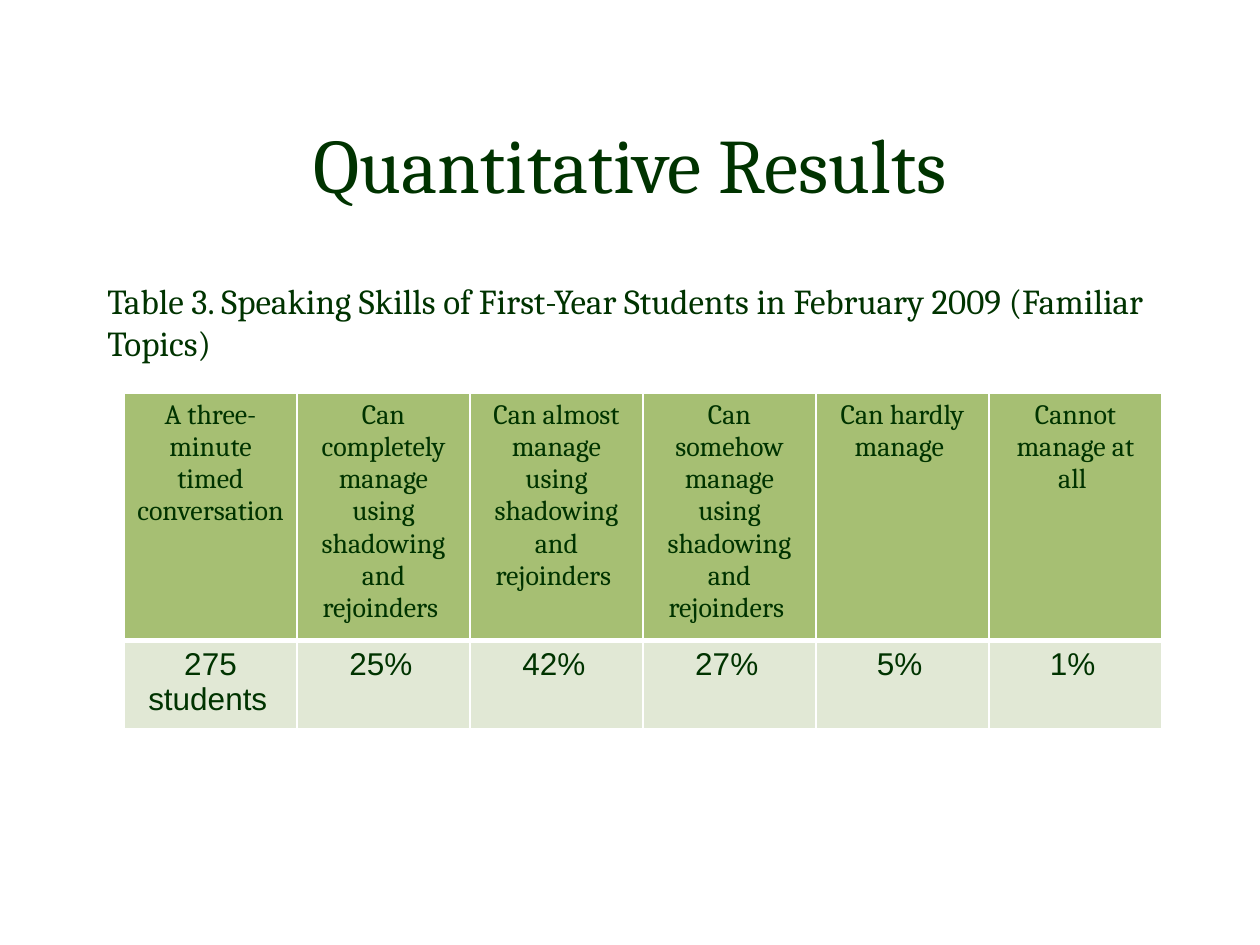
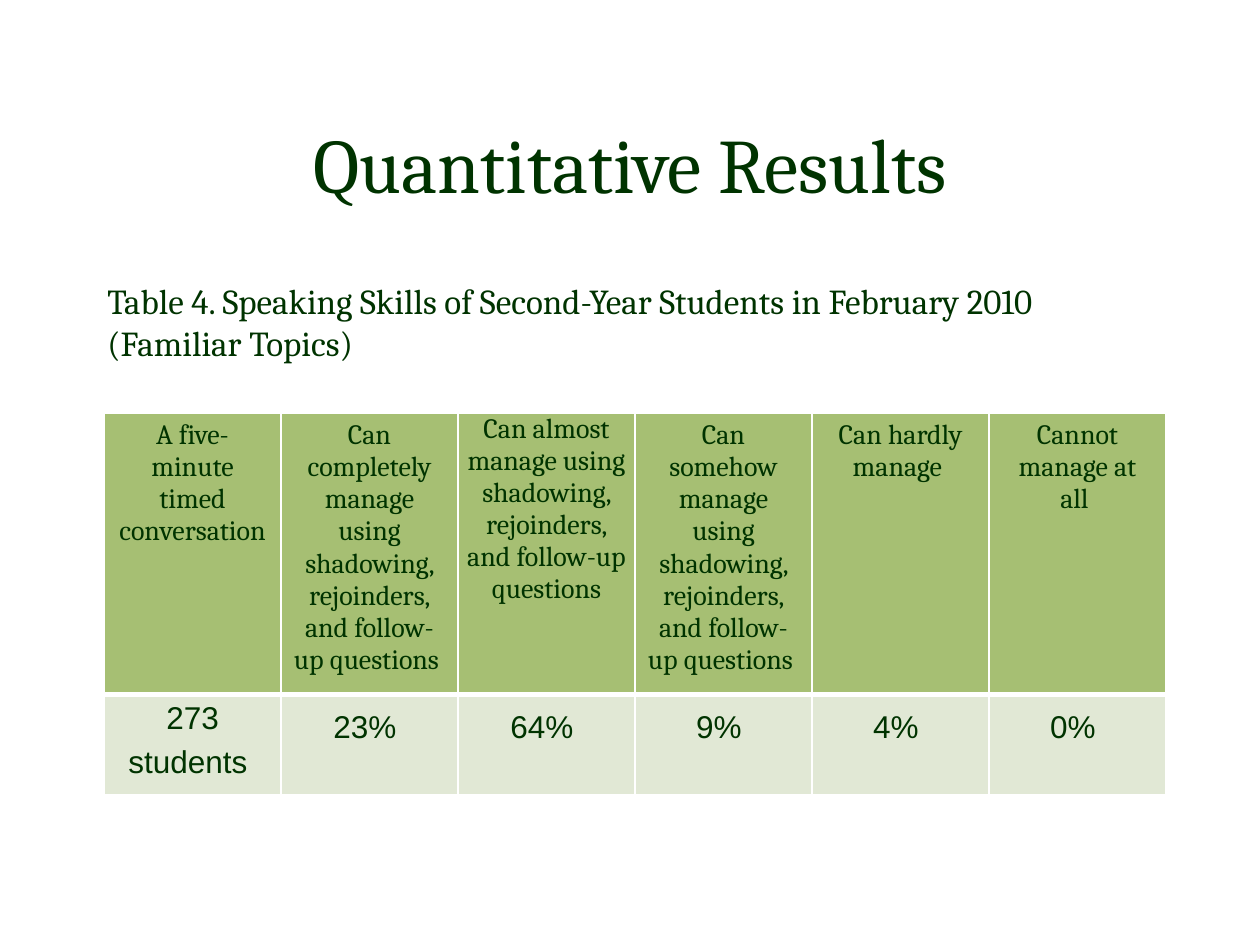
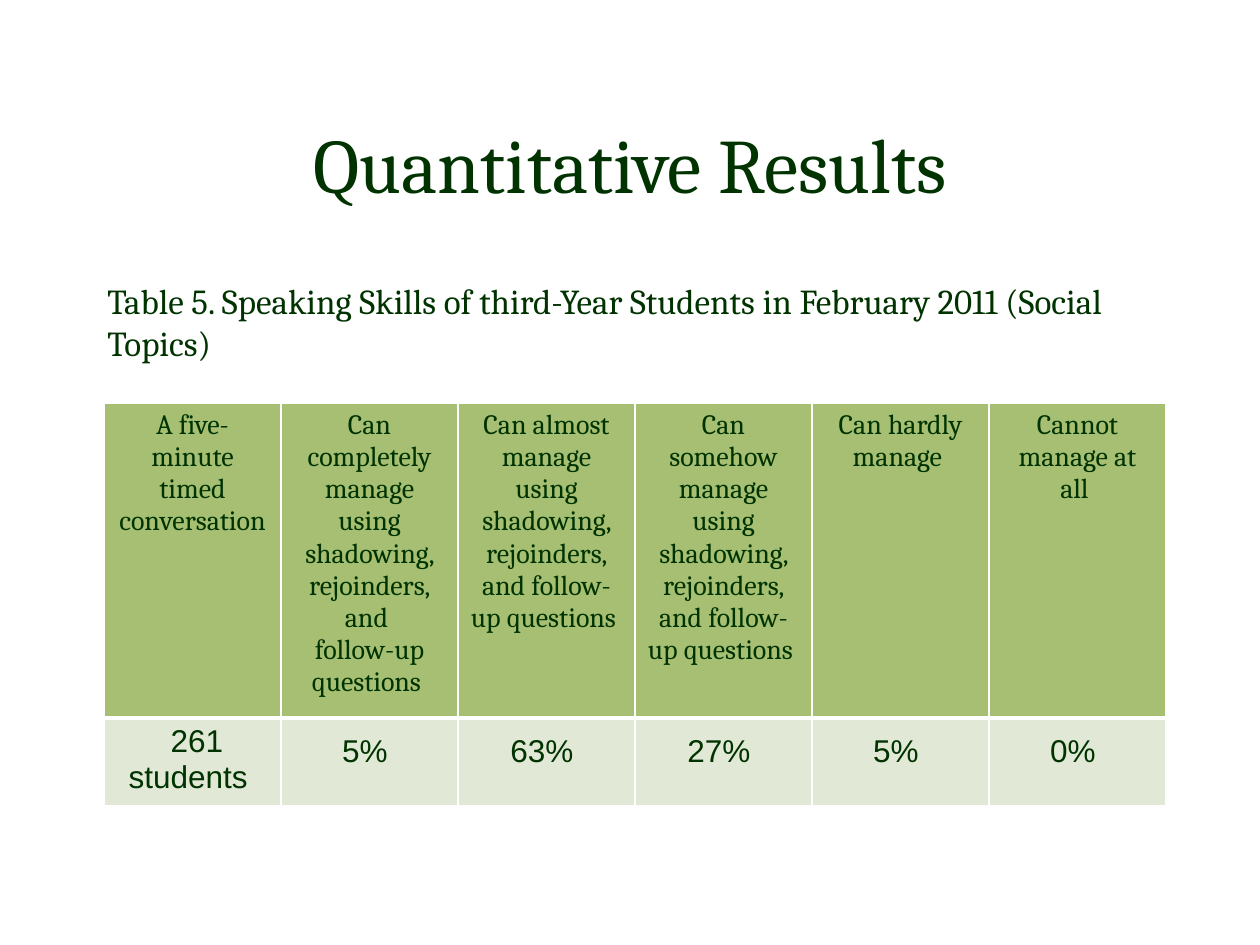
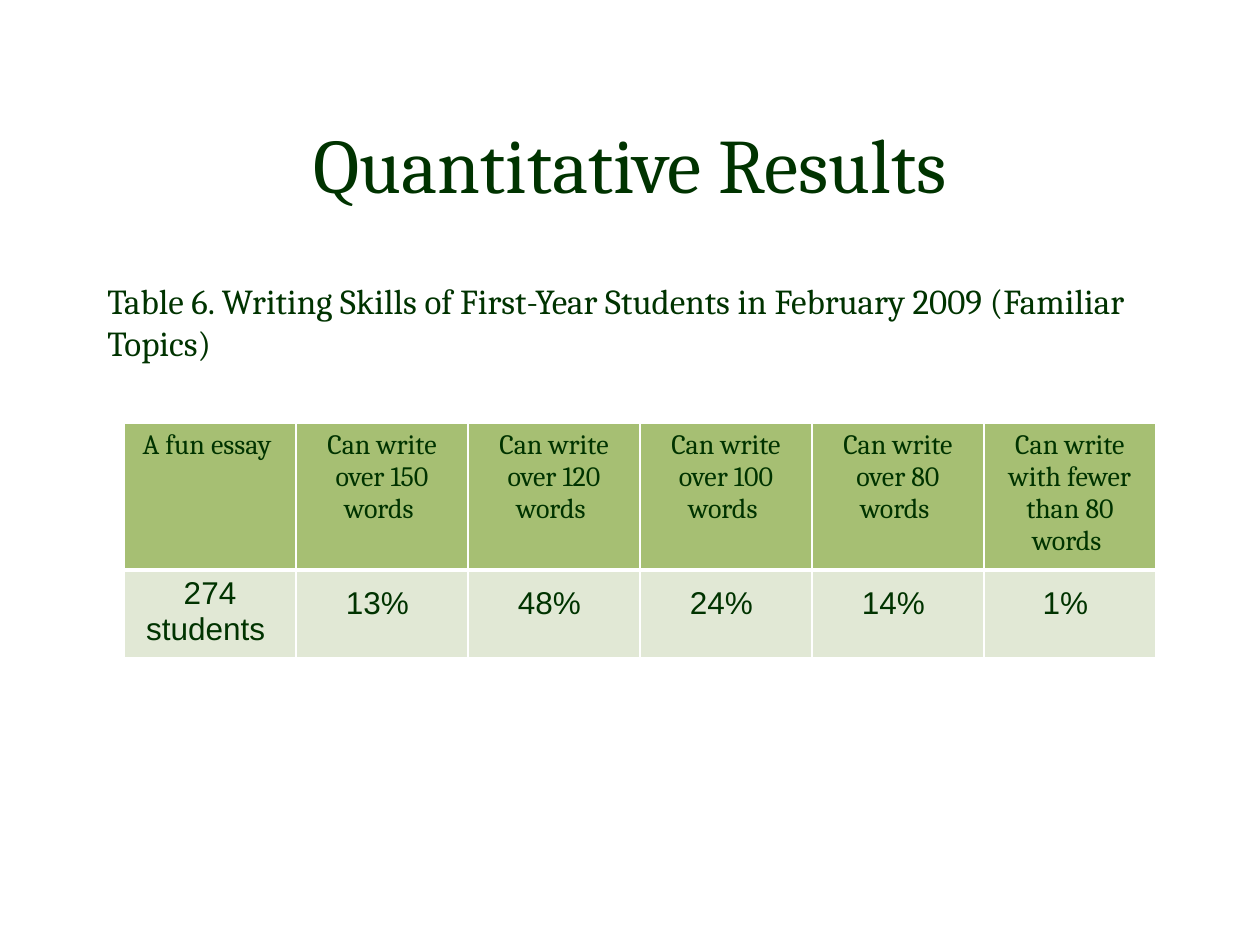
from lxml import etree
from pptx import Presentation
from pptx.dml.color import RGBColor
from pptx.enum.text import MSO_ANCHOR, PP_ALIGN
from pptx.oxml.ns import qn
from pptx.util import Emu, Pt

PX = 914400 / 126
CENTER, LEFT = PP_ALIGN.CENTER, PP_ALIGN.LEFT
TOP, MIDDLE = MSO_ANCHOR.TOP, MSO_ANCHOR.MIDDLE
COLORS = {"text": "003300", "header": "A6BF73", "body": "E1E8D5", "border": "FFFFFF"}
SERIF, SANS = "Cambria", "Arial"


def px(n):
    return Emu(round(n * PX))


def write(tf, text, size=16, font=SERIF, align=CENTER, tail=None):
    """Fill a text frame; tail is the size of a closing serif space."""
    tf.word_wrap = True
    for i, line in enumerate(text.split("\n")):
        p = tf.paragraphs[0] if i == 0 else tf.add_paragraph()
        p.alignment = align
        runs = [(line, size, font)] + ([(" ", tail, SERIF)] if tail else [])
        for content, points, face in runs:
            r = p.add_run()
            r.text = content
            r.font.size = Pt(points)
            r.font.name = face
            r.font.color.rgb = RGBColor.from_string(COLORS["text"])


# Caption, table box (left, top, height), column width, header height,
# size of the space after each figure, header texts, figures
FOLLOW_UP = "manage using shadowing, rejoinders, and follow-up questions"
TABLES = [
    dict(caption="Table 3. Speaking Skills of First-Year Students in February 2009 (Familiar Topics)",
         box=(124, 393, 336), col=173, head=52, tail=14,
         headers=["A three-minute timed conversation ",
                  "Can completely manage using shadowing and rejoinders ",
                  "Can almost manage using shadowing and rejoinders ",
                  "Can somehow manage using shadowing and rejoinders ",
                  "Can hardly manage ", "Cannot manage at all "],
         figures=["275 students", "25%", "42%", "27%", "5%", "1%"]),
    dict(caption="Table 4. Speaking Skills of Second-Year Students in February 2010 (Familiar Topics)",
         box=(104, 413, 369), col=177, head=52, tail=24, tight=2,
         headers=["A five-minute timed conversation ",
                  f"Can completely {FOLLOW_UP} ", f"Can almost {FOLLOW_UP}",
                  f"Can somehow {FOLLOW_UP} ",
                  "Can hardly manage ", "Cannot manage at all "],
         figures=["273 students", "23%", "64%", "9%", "4%", "0%"]),
    dict(caption="Table 5. Speaking Skills of third-Year Students in February 2011 (Social Topics)",
         box=(104, 403, 403), col=177, head=52, tail=24,
         headers=["A five-minute timed conversation ",
                  "Can completely manage using shadowing, rejoinders, and \nfollow-up questions ",
                  f"Can almost {FOLLOW_UP} ", f"Can somehow {FOLLOW_UP} ",
                  "Can hardly manage ", "Cannot manage at all "],
         figures=[" 261 students ", "5%", "63%", "27%", "5%", "0%"]),
    dict(caption="Table 6. Writing Skills of First-Year Students in February 2009 (Familiar Topics)",
         box=(124, 423, 236), col=172, head=59, tail=24,
         headers=["A fun essay "]
         + [f"Can write over {n} words " for n in (150, 120, 100, 80)]
         + ["Can write with fewer than 80 words "],
         figures=["274 students ", "13%", "48%", "24%", "14%", "1%"]),
]

prs = Presentation()
prs.slide_width, prs.slide_height = px(1260), px(945)

for spec_table in TABLES:
    s = prs.slides.add_slide(prs.slide_layouts[6])

    # Title and caption
    for text, top, height, size, align, anchor in (
            ("Quantitative Results", 84, 158, 44, CENTER, MIDDLE),
            (spec_table["caption"], 273, 567, 20, LEFT, TOP)):
        sp = s.shapes.add_textbox(px(95), px(top), px(1071), px(height))
        sp.text_frame.vertical_anchor = anchor
        write(sp.text_frame, text, size=size, align=align)

    # Table grid: rows grow to fit their text
    left, top, height = spec_table["box"]
    rows = [spec_table["headers"], spec_table["figures"]]
    count = len(rows[0])
    frame = s.shapes.add_table(len(rows), count, px(left), px(top),
                               px(spec_table["col"] * count), px(height))
    table = frame.table
    table.first_row = table.horz_banding = False
    for column in table.columns:
        column.width = px(spec_table["col"])
    table.rows[0].height, table.rows[1].height = px(spec_table["head"]), px(52)
    frame.height = px(height)

    # Cells
    for y, texts in enumerate(rows):
        for x, text in enumerate(texts):
            cell = table.cell(y, x)
            if y == 0:
                write(cell.text_frame, text)
            else:
                tail = None if text.endswith(" ") else spec_table["tail"]
                write(cell.text_frame, text, size=18, font=SANS, tail=tail)
            if y == 0 and x == spec_table.get("tight"):
                cell.margin_left = cell.margin_right = px(9)
                cell.margin_top = cell.margin_bottom = 0

            # Borders come before the fill in the cell properties
            tc_pr = cell._tc.get_or_add_tcPr()
            for side in ("lnL", "lnR", "lnT", "lnB"):
                thick = (y == 0 and side == "lnB") or (y == 1 and side == "lnT")
                ln = etree.SubElement(tc_pr, qn(f"a:{side}"), w=str(Pt(3 if thick else 1)))
                fill = etree.SubElement(ln, qn("a:solidFill"))
                etree.SubElement(fill, qn("a:srgbClr"), val=COLORS["border"])
            cell.fill.solid()
            cell.fill.fore_color.rgb = RGBColor.from_string(COLORS["body" if y else "header"])

prs.save("out.pptx")
